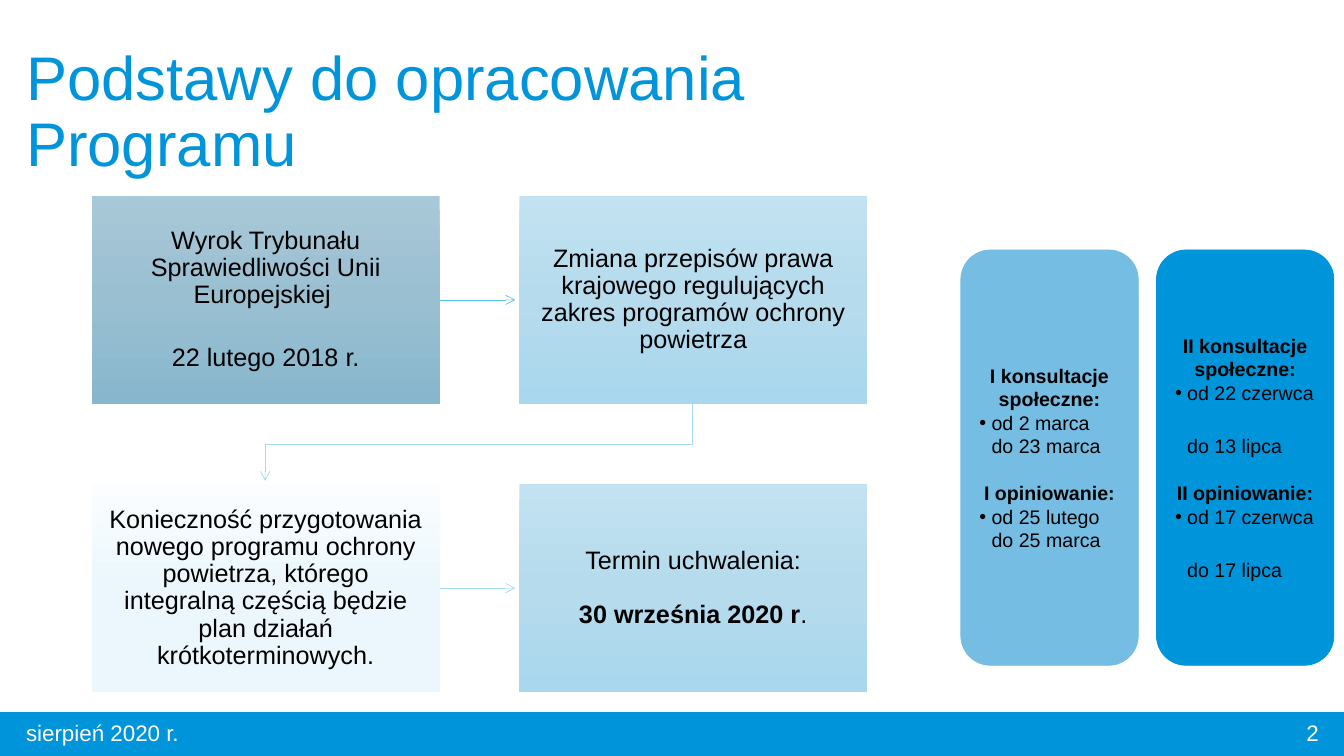
from lxml.etree import SubElement
from pptx import Presentation
from pptx.dml.color import RGBColor
from pptx.enum.shapes import MSO_CONNECTOR, MSO_SHAPE
from pptx.enum.text import MSO_ANCHOR, MSO_AUTO_SIZE, PP_ALIGN
from pptx.oxml.ns import qn
from pptx.util import Inches, Pt

BLUE = "0094DA"
SKY = ["C3E2F1", "B5DBED", "A9D7ED"]
WIDE, HIGH = 3.45, 2.07
COLS, ROWS = (0.91, 5.15), (1.94, 4.8)


def paint(color, tint):
    color.rgb = RGBColor.from_string(tint)


def style(para, size, tint="000000", bold=False):
    for run in para.runs:
        run.font.name = "Arial"
        run.font.size = Pt(size)
        run.font.bold = bold
        paint(run.font.color, tint)


def setup(frame, inset=None):
    frame.word_wrap = True
    frame.auto_size = MSO_AUTO_SIZE.NONE
    frame.vertical_anchor = MSO_ANCHOR.MIDDLE
    if inset:
        frame.margin_left = frame.margin_right = Inches(inset)
        frame.margin_top = frame.margin_bottom = Inches(inset)


def block(slide, kind, left, top, wide, high):
    shape = slide.shapes.add_shape(
        kind, Inches(left), Inches(top), Inches(wide), Inches(high))
    shape.shadow.inherit = False
    return shape


def solid(shape, tint, width):
    shape.fill.solid()
    paint(shape.fill.fore_color, tint)
    paint(shape.line.color, tint)
    shape.line.width = Pt(width)


def fade(shape, tints):
    shape.fill.gradient()
    shape.fill.gradient_angle = 270
    stops = shape._element.spPr.find(".//" + qn("a:gsLst"))
    for stop in list(stops):
        stops.remove(stop)
    for i, tint in enumerate(tints):
        stop = SubElement(stops, qn("a:gs"), pos=str(i * 50000))
        SubElement(stop, qn("a:srgbClr"), val=tint)
    shape.line.fill.background()


def card(slide, col, row, tints, texts, gap=0):
    shape = block(slide, MSO_SHAPE.RECTANGLE, COLS[col], ROWS[row], WIDE, HIGH)
    fade(shape, tints)
    frame = shape.text_frame
    setup(frame, 0.14)
    frame.text = "\n".join(texts)
    for i, para in enumerate(frame.paragraphs):
        para.alignment = PP_ALIGN.CENTER
        para.line_spacing = 0.9
        if i:
            para.space_before = Pt(gap)
        style(para, 18)
    return frame


def bullet(para):
    props = para._p.get_or_add_pPr()
    props.set("marL", str(Inches(0.12)))
    props.set("indent", str(Inches(-0.12)))
    SubElement(props, qn("a:buFont"), typeface="Arial")
    SubElement(props, qn("a:buChar"), char="•")


def panel(slide, left, tint, texts):
    shape = block(slide, MSO_SHAPE.FLOWCHART_ALTERNATE_PROCESS,
                  left, 2.48, 1.76, 4.12)
    solid(shape, tint, 0.5)
    frame = shape.text_frame
    setup(frame)
    frame.text = "\n".join(texts)
    for i, para in enumerate(frame.paragraphs):
        head = i % 2 == 0
        para.alignment = PP_ALIGN.CENTER if head else PP_ALIGN.LEFT
        if not head:
            bullet(para)
        elif i:
            para.space_before = Pt(16.5)
        style(para, 14, bold=head)


def tip(shape, tint):
    paint(shape.line.color, tint)
    shape.line.width = Pt(0.5)
    SubElement(shape.line._get_or_add_ln(), qn("a:tailEnd"), type="arrow")


def arrow(slide, row, tint):
    y = Inches(ROWS[row] + HIGH / 2)
    line = slide.shapes.add_connector(
        MSO_CONNECTOR.STRAIGHT, Inches(COLS[0] + WIDE), y, Inches(5.11), y)
    tip(line, tint)
    SubElement(line._element.spPr, qn("a:effectLst"))


def elbow(slide, points, tint):
    spots = [(Inches(x), Inches(y)) for x, y in points]
    build = slide.shapes.build_freeform(*spots[0])
    build.add_line_segments(spots[1:], close=False)
    shape = build.convert_to_shape()
    shape.fill.background()
    tip(shape, tint)
    shape.shadow.inherit = False


def label(slide, left, wide, text, align):
    box = slide.shapes.add_textbox(
        Inches(left), Inches(7.07), Inches(wide), Inches(0.4))
    setup(box.text_frame)
    box.text_frame.text = text
    para = box.text_frame.paragraphs[0]
    para.alignment = align
    style(para, 16, "FFFFFF")


def title(slide, text):
    shape = slide.shapes.title
    shape.left, shape.top = Inches(0.16), Inches(0.4)
    shape.width, shape.height = Inches(10.02), Inches(1.45)
    setup(shape.text_frame)
    shape.text_frame.text = text
    para = shape.text_frame.paragraphs[0]
    para.alignment = PP_ALIGN.LEFT
    para.line_spacing = 0.9
    style(para, 44, BLUE)


def main():
    deck = Presentation()
    deck.slide_width, deck.slide_height = Inches(13.33), Inches(7.5)
    slide = deck.slides.add_slide(deck.slide_layouts[5])
    title(slide, "Podstawy do opracowania Programu")

    band = block(slide, MSO_SHAPE.RECTANGLE, 0, 7.07, 13.33, 0.43)
    solid(band, BLUE, 1)
    label(slide, 0.16, 3.17, "sierpień 2020 r.", PP_ALIGN.LEFT)
    label(slide, 10.18, 3, "2", PP_ALIGN.RIGHT)

    card(slide, 0, 0, ["A7C8D7", "9ABFD1", "87B7CD"],
         ["Wyrok Trybunału Sprawiedliwości Unii Europejskiej ",
          "22 lutego 2018 r."], 25.5)
    card(slide, 1, 0, SKY,
         ["Zmiana przepisów prawa krajowego regulujących "
          "zakres programów ochrony powietrza"])
    card(slide, 0, 1, ["FBFDFF", "EBF7FD", "E9F6FD"],
         ["Konieczność przygotowania nowego programu ochrony powietrza, "
          "którego integralną częścią będzie plan działań "
          "krótkoterminowych."])
    term = card(slide, 1, 1, SKY,
                ["Termin uchwalenia:", "30 września 2020 r"], 19)
    date = term.paragraphs[1]
    date.add_run().text = "."
    style(date, 18)
    date.runs[0].font.bold = True

    arrow(slide, 0, "5AC3E8")
    arrow(slide, 1, "A1DAF4")
    elbow(slide, [(6.87, 4.01), (6.87, 4.41), (2.63, 4.41), (2.63, 4.77)],
          "A1DAF4")

    panel(slide, 9.53, "75BDE3",
          ["I konsultacje społeczne:", "od 2 marca \vdo 23 marca",
           "I opiniowanie:", "od 25 lutego do 25 marca"])
    panel(slide, 11.47, BLUE,
          ["II konsultacje społeczne:", "od 22 czerwca \vdo 13 lipca",
           "II opiniowanie:", "od 17 czerwca \vdo 17 lipca"])
    deck.save("out.pptx")


if __name__ == "__main__":
    main()
